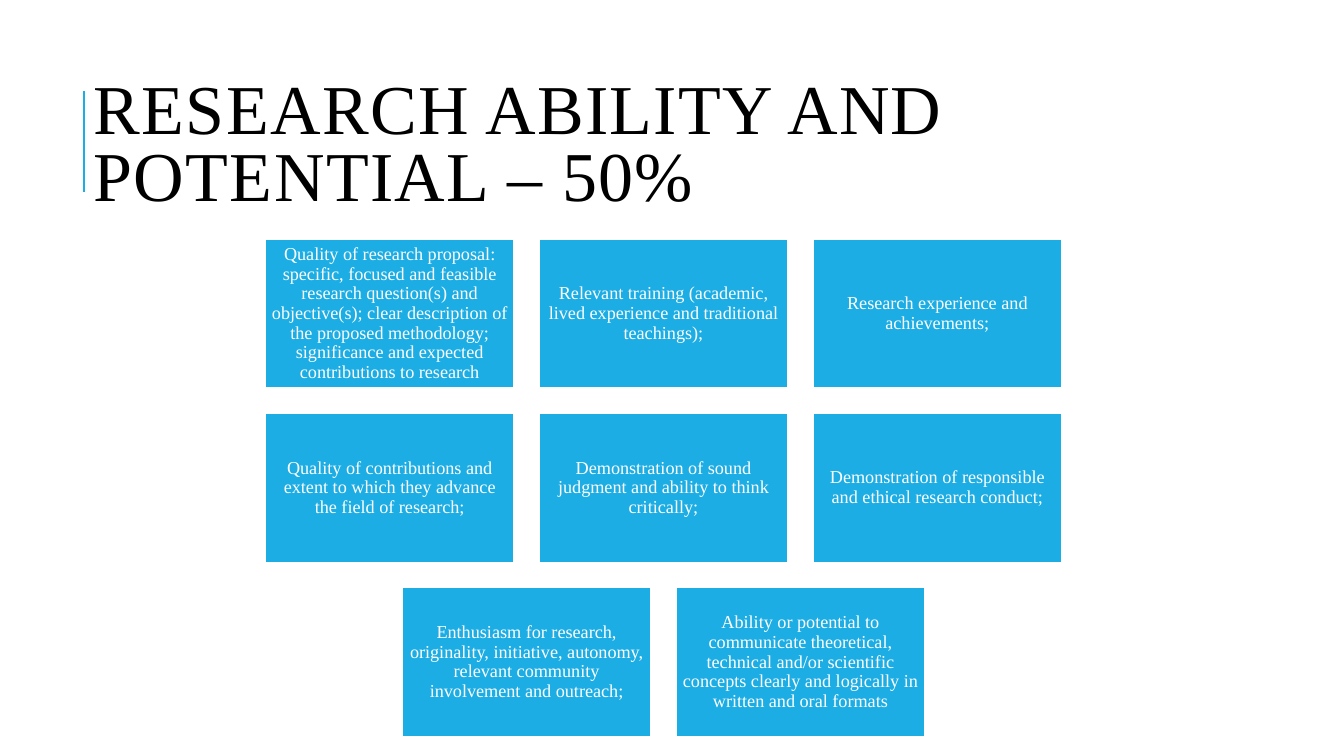
from pptx import Presentation
from pptx.dml.color import RGBColor as Rgb
from pptx.enum.shapes import MSO_CONNECTOR as Link, MSO_SHAPE as Shape
from pptx.enum.text import MSO_ANCHOR as Anchor, PP_ALIGN as Align
from pptx.oxml.ns import qn
from pptx.util import Pt
from lxml.etree import SubElement

HUES = {"blue": "1CADE4", "white": "FFFFFF", "black": "000000"}
FONT = "Times New Roman"
TITLE = "RESEARCH ABILITY AND POTENTIAL – 50%"
ROWS = [
    ["Quality of research proposal: specific, focused and feasible research "
     "question(s) and objective(s); clear description of the proposed methodology; "
     "significance and expected contributions to research",
     "Relevant training (academic, lived experience and traditional teachings);",
     "Research experience and achievements;"],
    ["Quality of contributions and extent to which they advance the field of research;",
     "Demonstration of sound judgment and ability to think critically;",
     "Demonstration of responsible and ethical research conduct;"],
    ["Enthusiasm for research, originality, initiative, autonomy, relevant "
     "community involvement and outreach;",
     "Ability or potential to communicate theoretical, technical and/or scientific "
     "concepts clearly and logically in written and oral formats"],
]
MID, TOP = 473.9, 170.7
WIDE, HIGH = 177.8, 106.7
GAP = 17.8


def hue(name):
    """Return the named colour."""
    return Rgb.from_string(HUES[name])


def write(frame, text, size, color, lead):
    """Put one run of text in a frame and return its paragraph and run."""
    frame.word_wrap = True
    frame.vertical_anchor = Anchor.MIDDLE
    para = frame.paragraphs[0]
    para.line_spacing = lead
    run = para.add_run()
    run.text = text
    run.font.name = FONT
    run.font.size = Pt(size)
    run.font.color.rgb = hue(color)
    return para, run


def add_title(slide):
    """Add the spaced-out title."""
    box = slide.shapes.add_textbox(Pt(59.8), Pt(51.8), Pt(676.8), Pt(107.3))
    para, run = write(box.text_frame, TITLE, 50, "black", 0.8)
    run.font._element.set("spc", "100")


def add_rule(slide):
    """Add the upright line beside the title."""
    line = slide.shapes.add_connector(Link.STRAIGHT, Pt(60), Pt(136.8), Pt(60), Pt(64.8))
    line.line.color.rgb = hue("blue")
    line.line.width = Pt(1.5)
    SubElement(line._element.spPr, qn("a:effectLst"))


def add_card(slide, left, top, text):
    """Add one blue card with centred text."""
    card = slide.shapes.add_shape(Shape.RECTANGLE, Pt(left), Pt(top), Pt(WIDE), Pt(HIGH))
    card.shadow.inherit = False
    card.fill.solid()
    card.fill.fore_color.rgb = hue("blue")
    card.line.color.rgb = hue("white")
    card.line.width = Pt(1.25)
    frame = card.text_frame
    frame.margin_left = frame.margin_right = Pt(3.9)
    frame.margin_top = frame.margin_bottom = Pt(3.9)
    para, run = write(frame, text, 13, "white", 0.9)
    para.alignment = Align.CENTER


def add_grid(slide):
    """Lay out the rows of cards, each row centred."""
    for row, texts in enumerate(ROWS):
        span = len(texts) * (WIDE + GAP) - GAP
        for col, text in enumerate(texts):
            left = MID - span / 2 + col * (WIDE + GAP)
            add_card(slide, left, TOP + row * (HIGH + GAP), text)


def main():
    """Build and save the slide."""
    deck = Presentation()
    deck.slide_width, deck.slide_height = Pt(960), Pt(540)
    slide = deck.slides.add_slide(deck.slide_layouts[6])
    add_rule(slide)
    add_title(slide)
    add_grid(slide)
    deck.save("out.pptx")


if __name__ == "__main__":
    main()
